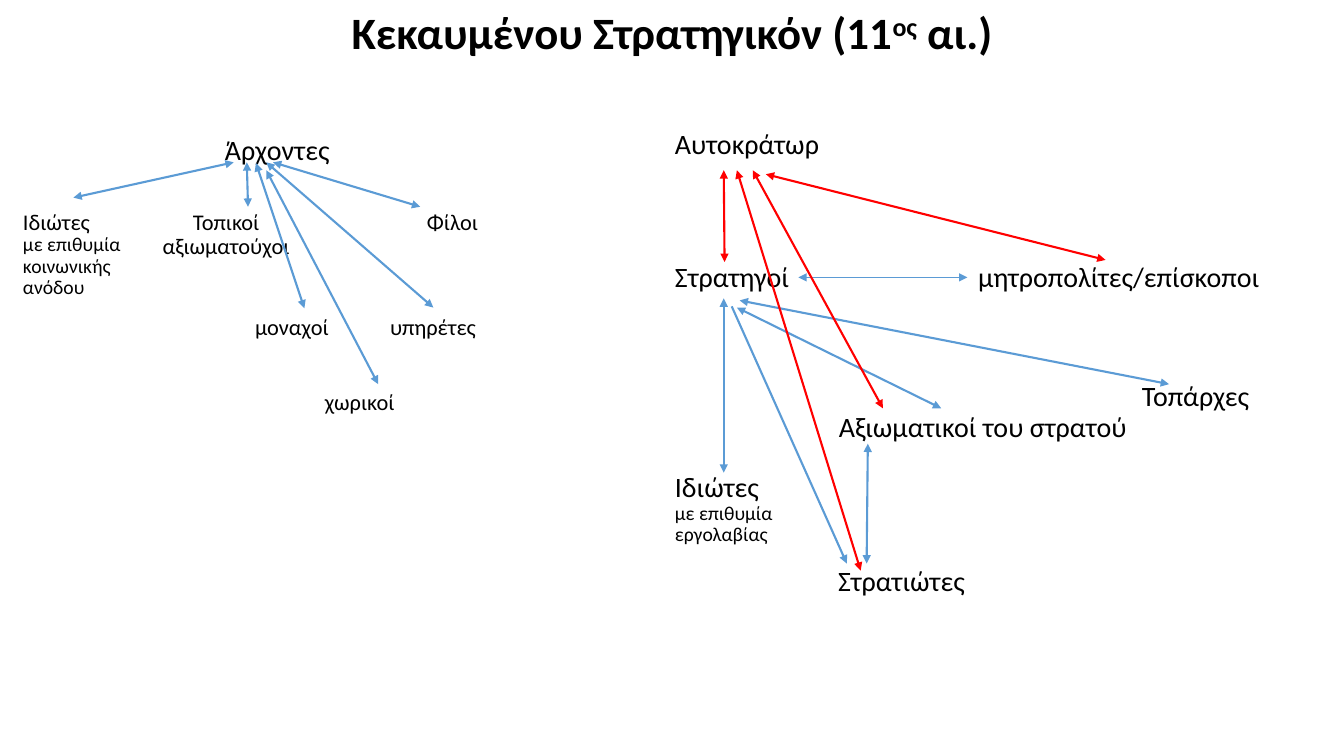
"""Builds the slide on the relations of officials in the Strategikon of Kekaumenos."""
from lxml import etree
from pptx import Presentation
from pptx import util as u
from pptx.dml.color import RGBColor
from pptx.enum import shapes, text
from pptx.oxml.ns import qn

BLUE, RED, BLACK = "5B9BD5", "FF0000", "000000"
LEFT, CENTER = text.PP_ALIGN.LEFT, text.PP_ALIGN.CENTER
LINE_SPACING = 0.9


def add_run(p, words, size=20, bold=False, color=BLACK, baseline=0):
    """Add one formatted run to a paragraph."""
    p.line_spacing = LINE_SPACING
    r = p.add_run()
    r.text = words
    r.font.name, r.font.size, r.font.bold = "Calibri", u.Pt(size), bold
    r.font.color.rgb = RGBColor.from_string(color)
    if baseline:
        r._r.get_or_add_rPr().set("baseline", str(baseline))


prs = Presentation()
prs.slide_width, prs.slide_height = u.Cm(33.87), u.Cm(19.05)
s = prs.slides.add_slide(prs.slide_layouts[5])

title = s.shapes.title
title.left, title.top, title.width, title.height = 0, 0, prs.slide_width, u.Cm(1.78)
tf = title.text_frame
tf.auto_size = text.MSO_AUTO_SIZE.NONE
tf.vertical_anchor = text.MSO_ANCHOR.MIDDLE
p = tf.paragraphs[0]
p.alignment = CENTER
for words, baseline in [("Κεκαυμένου Στρατηγικόν (11", 0), ("ος", 30000), (" αι.)", 0)]:
    add_run(p, words, size=32, bold=True, baseline=baseline)

# (left, middle of first line, width, alignment, [(text, size), ...])
labels = [
    (5.67, 3.83, 4, LEFT, [("Άρχοντες", 20)]),
    (0.58, 5.62, 3.4, LEFT, [("Ιδιώτες", 16), ("με επιθυμία", 14), ("κοινωνικής", 14), ("ανόδου", 14)]),
    (3.7, 5.62, 4, CENTER, [("Τοπικοί", 16), ("αξιωματούχοι", 16)]),
    (10.76, 5.62, 3, LEFT, [("Φίλοι", 16)]),
    (6.43, 8.27, 3, LEFT, [("μοναχοί", 16)]),
    (9.83, 8.27, 3, LEFT, [("υπηρέτες", 16)]),
    (8.19, 10.18, 3, LEFT, [("χωρικοί", 16)]),
    (17.01, 3.68, 5, LEFT, [("Αυτοκράτωρ", 20)]),
    (17.01, 7.03, 4, LEFT, [("Στρατηγοί", 20)]),
    (24.65, 7.03, 8.5, LEFT, [("μητροπολίτες/επίσκοποι", 20)]),
    (28.78, 10.03, 4, LEFT, [("Τοπάρχες", 20)]),
    (21.14, 10.79, 8.5, LEFT, [("Αξιωματικοί του στρατού", 20)]),
    (17.01, 12.32, 4, LEFT, [("Ιδιώτες", 20), ("με επιθυμία", 14), ("εργολαβίας", 14)]),
    (21.12, 14.67, 5, LEFT, [("Στρατιώτες", 20)]),
]
for left, middle, width, align, lines in labels:
    heights = [u.Pt(size * 1.22 * LINE_SPACING) for _, size in lines]
    sp = s.shapes.add_textbox(u.Cm(left), u.Cm(middle) - heights[0] // 2, u.Cm(width), sum(heights))
    tf = sp.text_frame
    tf.word_wrap = True
    tf.margin_left = tf.margin_right = tf.margin_top = tf.margin_bottom = 0
    for i, (words, size) in enumerate(lines):
        p = tf.add_paragraph() if i else tf.paragraphs[0]
        p.alignment = align
        add_run(p, words, size=size)

BOTH, END = ("headEnd", "tailEnd"), ("tailEnd",)
arrows = [
    (1.85, 4.98, 5.89, 4.09, BLUE, 1.5, BOTH),
    (6.22, 4.09, 6.25, 5.21, BLUE, 1.5, BOTH),
    (6.88, 4.09, 10.59, 5.21, BLUE, 1.5, BOTH),
    (6.45, 4.11, 7.67, 7.77, BLUE, 1.5, BOTH),
    (6.71, 4.09, 10.92, 7.75, BLUE, 1.5, BOTH),
    (6.71, 4.29, 9.53, 9.68, BLUE, 1.5, BOTH),
    (18.24, 4.29, 18.26, 6.6, RED, 1.5, BOTH),
    (20.12, 6.99, 24.38, 6.99, BLUE, 0.5, BOTH),
    (18.24, 7.52, 18.24, 11.91, BLUE, 1.5, BOTH),
    (18.64, 7.57, 29.46, 9.68, BLUE, 1.5, BOTH),
    (18.57, 7.75, 23.72, 10.29, BLUE, 1.5, BOTH),
    (21.87, 11.18, 21.84, 14.2, BLUE, 1.5, BOTH),
    (18.44, 7.72, 21.34, 14.2, BLUE, 1.5, END),
    (18.57, 4.29, 21.69, 14.38, RED, 1.5, BOTH),
    (18.97, 4.29, 22.25, 10.29, RED, 1.5, BOTH),
    (19.3, 4.39, 27.86, 6.55, RED, 1.5, BOTH),
]
for x1, y1, x2, y2, color, weight, ends in arrows:
    line = s.shapes.add_connector(
        shapes.MSO_CONNECTOR.STRAIGHT, u.Cm(x1), u.Cm(y1), u.Cm(x2), u.Cm(y2))
    line.line.color.rgb = RGBColor.from_string(color)
    line.line.width = u.Pt(weight)
    ln = line.line._get_or_add_ln()
    for end in ends:
        etree.SubElement(ln, qn("a:" + end), type="triangle")
    etree.SubElement(line._element.spPr, qn("a:effectLst"))

prs.save("out.pptx")
